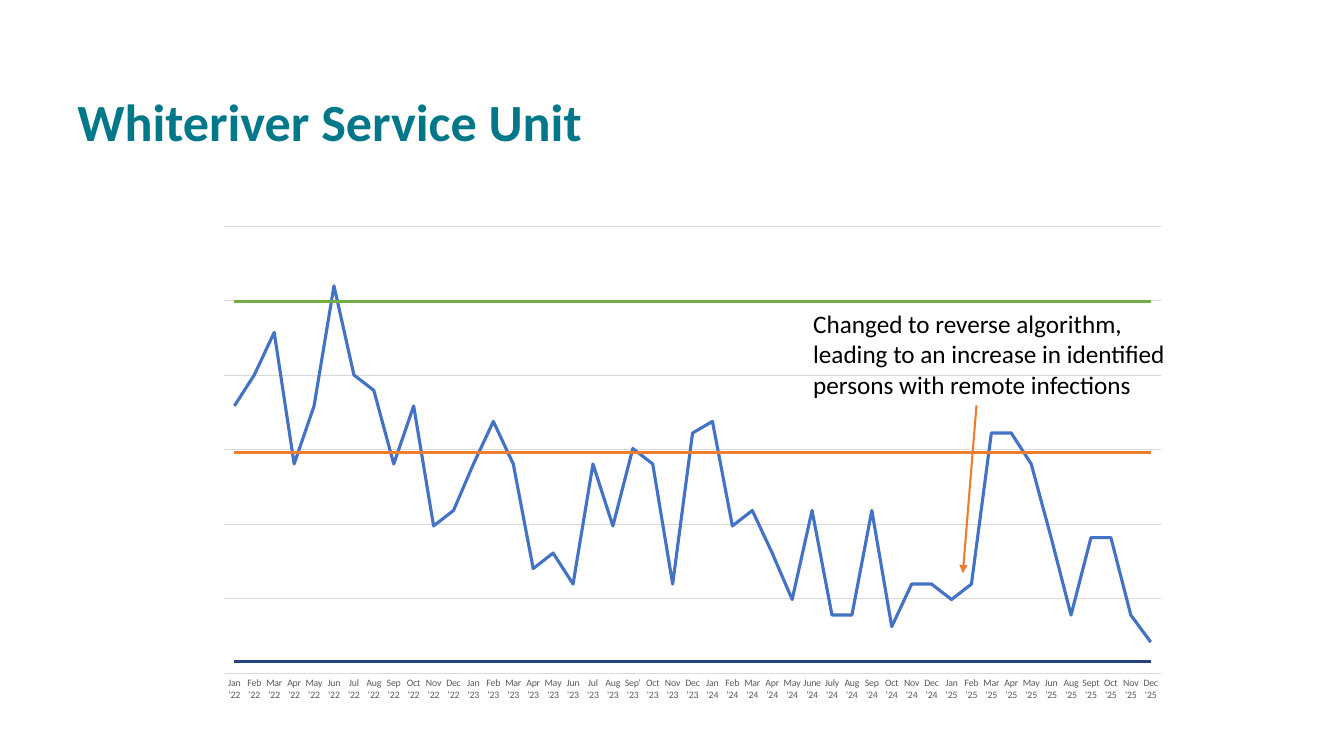
import pptx
import pptx.chart.data
import pptx.dml.color
import pptx.enum.chart
import pptx.enum.shapes
import pptx.enum.text
import pptx.oxml
import pptx.oxml.ns
import pptx.util

RGBColor = pptx.dml.color.RGBColor
TEAL = RGBColor(0x00, 0x78, 0x8A)
BLACK = RGBColor(0x00, 0x00, 0x00)
GRAY = RGBColor(0x59, 0x59, 0x59)
LIGHT_GRAY = RGBColor(0xD9, 0xD9, 0xD9)
BLUE = RGBColor(0x44, 0x72, 0xC4)
GREEN = RGBColor(0x70, 0xAD, 0x47)
NAVY = RGBColor(0x26, 0x44, 0x78)
ORANGE = RGBColor(0xED, 0x7D, 0x31)
FONT = "Calibri"

MONTHS = {
    "22": "Jan Feb Mar Apr May Jun Jul Aug Sep Oct Nov Dec",
    "23": "Jan Feb Mar Apr May Jun Jul Aug Sep' Oct Nov Dec",
    "24": "Jan Feb Mar Apr May June July Aug Sep Oct Nov Dec",
    "25": "Jan Feb Mar Apr May Jun Aug Sept Oct Nov Dec",
}
LABELS = [f"{month} '{year}" for year, names in MONTHS.items() for month in names.split()]
MONTHLY = [
    69, 77, 88, 54, 69, 100, 77, 73, 54, 69, 38, 42,
    54, 65, 54, 27, 31, 23, 54, 38, 58, 54, 23, 62,
    65, 38, 42, 31, 19, 42, 15, 15, 42, 12, 23, 23,
    19, 23, 62, 62, 54, 35, 15, 35, 35, 15, 8,
]
SERIES = [
    (MONTHLY, BLUE),
    ([96] * len(LABELS), GREEN),
    ([3] * len(LABELS), NAVY),
    ([57] * len(LABELS), ORANGE),
]
GRID_STEP = 19.23
NOTE = [
    "Changed to reverse algorithm,",
    "leading to an increase in identified",
    "persons with remote infections",
]


def px(count):
    return pptx.util.Emu(count * 9525)


def style(font, size, color, bold=False):
    font.name = FONT
    font.size = pptx.util.Pt(size)
    font.color.rgb = color
    font.bold = bold


def add_title(page, left, top, width, height):
    title = page.shapes.title
    title.left, title.top, title.width, title.height = map(px, (left, top, width, height))
    frame = title.text_frame
    frame.text = "Whiteriver Service Unit"
    frame.auto_size = pptx.enum.text.MSO_AUTO_SIZE.NONE
    frame.vertical_anchor = pptx.enum.text.MSO_ANCHOR.BOTTOM
    para = frame.paragraphs[0]
    para.alignment = pptx.enum.text.PP_ALIGN.LEFT
    para.line_spacing = 0.9
    style(para.runs[0].font, 37.3, TEAL, bold=True)


def set_plot_area(chart, **fractions):
    """Pin the inner plot area to fractions (x, y, w, h) of the chart."""
    plot_area = chart._chartSpace.chart.plotArea
    for old in plot_area.findall(pptx.oxml.ns.qn("c:layout")):
        plot_area.remove(old)
    modes = '<c:xMode val="edge"/><c:yMode val="edge"/>'
    sizes = "".join(f'<c:{name} val="{value}"/>' for name, value in fractions.items())
    plot_area.insert(0, pptx.oxml.parse_xml(
        f'<c:layout {pptx.oxml.ns.nsdecls("c")}><c:manualLayout>'
        f'<c:layoutTarget val="inner"/>{modes}{sizes}</c:manualLayout></c:layout>'))


def add_trend_chart(page, left, top, width, height):
    data = pptx.chart.data.CategoryChartData()
    data.categories = LABELS
    for number, (values, _) in enumerate(SERIES, 1):
        data.add_series(f"Series {number}", values)
    chart = page.shapes.add_chart(
        pptx.enum.chart.XL_CHART_TYPE.LINE, *map(px, (left, top, width, height)), data).chart
    chart.has_legend = False
    chart.has_title = False
    style(chart.font, 10, BLACK)
    set_plot_area(chart, x=0.03, y=0.103, w=0.963, h=0.803)

    chart.plots[0].vary_by_categories = False
    for series, (_, color) in zip(chart.plots[0].series, SERIES):
        series.smooth = False
        series.format.line.color.rgb = color
        series.format.line.width = pptx.util.Pt(2.25)

    months = chart.category_axis
    months.major_tick_mark = pptx.enum.chart.XL_TICK_MARK.NONE
    style(months.tick_labels.font, 7, GRAY)
    scale = chart.value_axis
    scale.visible = False
    scale.minimum_scale = 0
    scale.maximum_scale = 6 * GRID_STEP
    scale.major_unit = GRID_STEP
    scale.has_major_gridlines = True
    for line in (months.format.line, scale.major_gridlines.format.line):
        line.color.rgb = LIGHT_GRAY
        line.width = pptx.util.Pt(0.75)


def add_callout(page, left, top, width, height):
    """Note with an arrow running down to the month of the change."""
    arrow = page.shapes.add_connector(
        pptx.enum.shapes.MSO_CONNECTOR.STRAIGHT,
        *map(px, (left + 165, top + height, left + 152, top + height + 160)))
    arrow.line.color.rgb = ORANGE
    arrow.line.width = pptx.util.Pt(1.5)
    namespace = pptx.oxml.ns.nsdecls("a")
    arrow.line._get_or_add_ln().append(
        pptx.oxml.parse_xml(f'<a:tailEnd {namespace} type="triangle"/>'))
    arrow._element.spPr.append(pptx.oxml.parse_xml(f"<a:effectLst {namespace}/>"))

    box = page.shapes.add_textbox(*map(px, (left, top, width, height)))
    frame = box.text_frame
    frame.text = "\n".join(NOTE)
    frame.word_wrap = False
    frame.auto_size = pptx.enum.text.MSO_AUTO_SIZE.SHAPE_TO_FIT_TEXT
    for para in frame.paragraphs:
        style(para.runs[0].font, 18, BLACK)


def main():
    deck = pptx.Presentation()
    deck.slide_width, deck.slide_height = px(1280), px(720)
    page = deck.slides.add_slide(deck.slide_layouts.get_by_name("Title Only"))
    add_title(page, 64, 30, 1015, 120)
    add_trend_chart(page, 186, 161, 926, 530)
    add_callout(page, 765, 289, 359, 97)
    deck.save("out.pptx")


if __name__ == "__main__":
    main()
